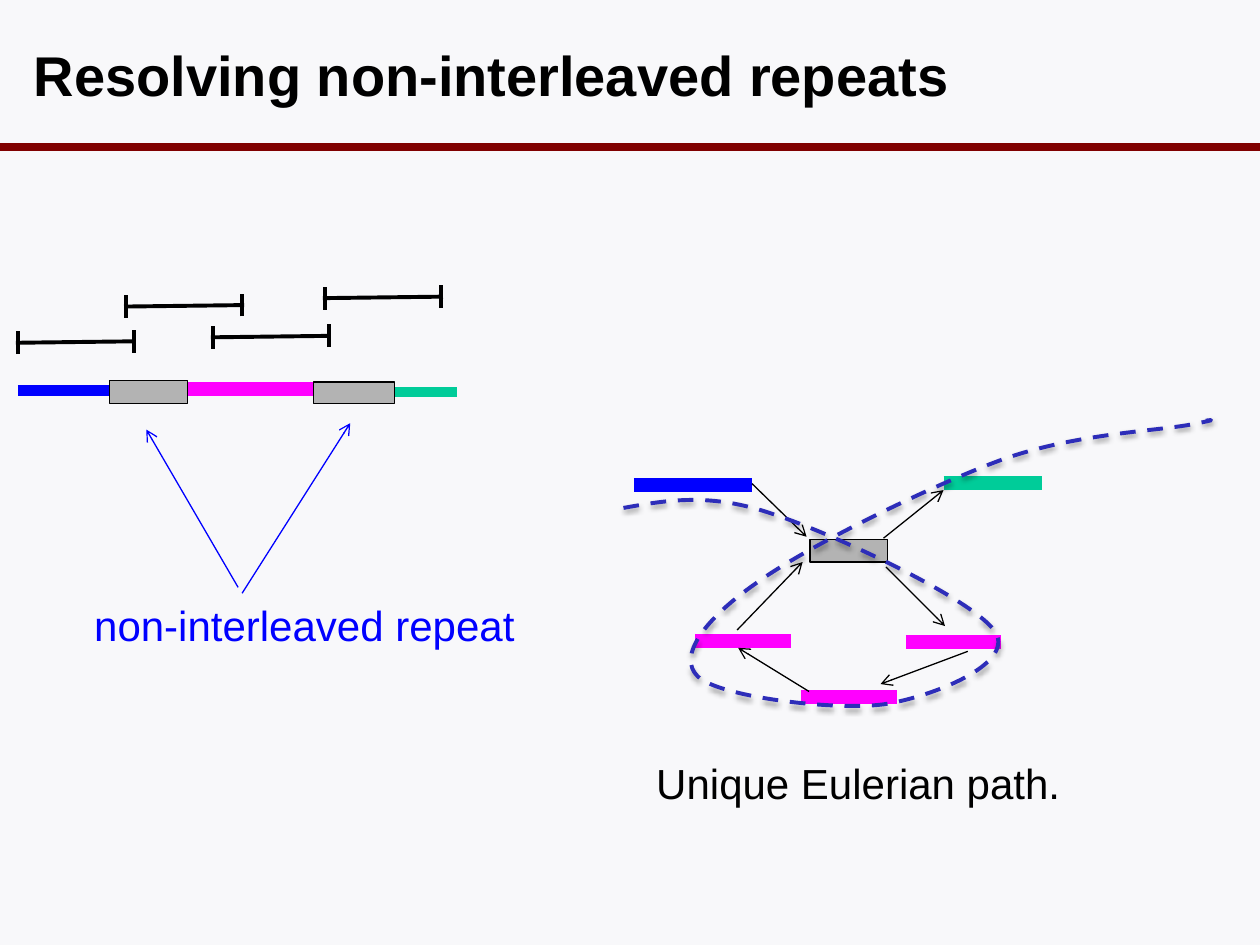
from dataclasses import dataclass

from lxml.etree import SubElement
from pptx import Presentation
from pptx.dml.color import RGBColor
from pptx.enum.dml import MSO_LINE
from pptx.enum.shapes import MSO_CONNECTOR, MSO_SHAPE
from pptx.enum.text import MSO_ANCHOR, MSO_AUTO_SIZE, PP_ALIGN
from pptx.oxml.ns import qn
from pptx.shapes.connector import Connector
from pptx.util import Cm, Pt

BLACK, BLUE, MAGENTA, GREEN = "000000", "0000FF", "FF00FF", "00CC99"
GREY, MAROON, INDIGO, PALE = "B3B3B3", "800000", "2D2DB9", "F8F8FA"
FONT = "Arial"


@dataclass
class Line:
    x1: float
    y1: float
    x2: float
    y2: float
    color: str = BLACK
    width: float = 0.75


@dataclass
class Box:
    left: float
    top: float
    width: float
    height: float


@dataclass
class Label:
    text: str
    box: Box
    color: str


def strip(left: float, right: float, y: float, color: str, width: float) -> Line:
    return Line(left, y, right, y, color, width)


GENOME_STRIPS = [
    strip(7.24, 9.22, 7.9, GREEN, 6),
    strip(0.36, 2.74, 7.87, BLUE, 6),
    strip(3.1, 6.58, 7.85, MAGENTA, 8),
]
GENOME_REPEATS = [Box(2.21, 7.67, 1.57, 0.46), Box(6.32, 7.7, 1.63, 0.43)]

GRAPH_STRIPS = [
    strip(19.02, 21.01, 9.73, GREEN, 8),
    strip(12.78, 15.16, 9.78, BLUE, 8),
    strip(14.02, 15.95, 12.93, MAGENTA, 8),
    strip(18.26, 20.17, 12.95, MAGENTA, 8),
    strip(16.15, 18.08, 14.05, MAGENTA, 8),
]
GRAPH_REPEAT = Box(16.33, 10.87, 1.57, 0.46)
GRAPH_ARROWS = [
    Line(15.16, 9.75, 16.26, 10.82),
    Line(17.86, 11.43, 19.05, 12.62),
    Line(19.51, 13.13, 17.75, 13.79),
    Line(14.86, 12.7, 16.18, 11.33),
    Line(17.81, 10.85, 19.02, 9.88),
    Line(16.31, 13.94, 14.88, 13.06),
]

# Start point, then two control points and an end point for each curve
EULERIAN_PATH = [
    (12.57, 10.24),
    (13.46, 10.08), (14.33, 9.93), (15.57, 10.36),
    (16.84, 10.77), (19.69, 12.12), (20.07, 12.75),
    (20.45, 13.39), (18.8, 14.05), (17.81, 14.2),
    (16.81, 14.33), (14.5, 14.05), (14.07, 13.64),
    (13.64, 13.23), (14.22, 12.47), (15.24, 11.76),
    (16.26, 11.02), (18.75, 9.8), (20.19, 9.27),
    (21.67, 8.74), (23.32, 8.69), (24, 8.56),
    (24.69, 8.43), (24.31, 8.48), (24.31, 8.48),
]

READ_STARTS = [(0.36, 6.91), (2.54, 6.18), (4.29, 6.8), (6.55, 6.01)]
READ_LENGTH, READ_RISE, TICK_HALF, OVERHANG = 2.34, 0.03, 0.23, 0.04

REPEAT_POINTERS = [
    Line(4.8, 11.84, 2.95, 8.66, BLUE),
    Line(4.88, 11.96, 7.06, 8.53, BLUE),
]
LABELS = [
    Label("non-interleaved repeat", Box(1.65, 11.96, 9.07, 1.27), BLUE),
    Label("Unique Eulerian path.", Box(12.98, 15.14, 8.74, 1.27), BLACK),
]


def rgb(color: str) -> RGBColor:
    return RGBColor.from_string(color)


def add_line(shapes, line: Line, arrow: bool = False) -> Connector:
    connector = shapes.add_connector(
        MSO_CONNECTOR.STRAIGHT, Cm(line.x1), Cm(line.y1), Cm(line.x2), Cm(line.y2)
    )
    connector.line.color.rgb = rgb(line.color)
    connector.line.width = Pt(line.width)
    if arrow:
        SubElement(connector.get_or_add_ln(), qn("a:tailEnd"), type="arrow")
    SubElement(connector.element.spPr, qn("a:effectLst"))
    return connector


def add_repeat(shapes, box: Box) -> None:
    shape = shapes.add_shape(
        MSO_SHAPE.RECTANGLE, Cm(box.left), Cm(box.top), Cm(box.width), Cm(box.height)
    )
    shape.shadow.inherit = False
    shape.fill.solid()
    shape.fill.fore_color.rgb = rgb(GREY)
    shape.line.color.rgb = rgb(BLACK)
    shape.line.width = Pt(0.75)


def add_read(shapes, left: float, y: float) -> None:
    """Draw a sequencing read: a slightly rising bar with a tick at each end."""
    group = shapes.add_group_shape()
    right, right_y = left + READ_LENGTH, y - READ_RISE
    add_line(group.shapes, Line(left - OVERHANG, y, right + OVERHANG, right_y, BLACK, 2.25))
    for x, middle in ((left, y), (right, right_y)):
        add_line(group.shapes, Line(x, middle + TICK_HALF, x, middle - TICK_HALF, BLACK, 2.25))


def add_run(paragraph, text: str, size: float, color: str, bold: bool = False) -> None:
    run = paragraph.add_run()
    run.text = text
    run.font.name = FONT
    run.font.size = Pt(size)
    run.font.bold = bold
    run.font.color.rgb = rgb(color)


def add_label(shapes, label: Label) -> None:
    box = label.box
    shape = shapes.add_textbox(Cm(box.left), Cm(box.top), Cm(box.width), Cm(box.height))
    shape.text_frame.word_wrap = False
    shape.text_frame.auto_size = MSO_AUTO_SIZE.SHAPE_TO_FIT_TEXT
    add_run(shape.text_frame.paragraphs[0], label.text, 24, label.color)


def add_curve(shapes, points: list[tuple[float, float]]) -> None:
    """Draw a dashed, shadowed curve, turning each three segments into one Bézier."""
    start, *rest = [(Cm(x), Cm(y)) for x, y in points]
    builder = shapes.build_freeform(*start)
    builder.add_line_segments(rest, close=False)
    shape = builder.convert_to_shape()
    segments = list(shape.element.iter(qn("a:lnTo")))
    outline = segments[0].getparent()
    for first in range(0, len(segments), 3):
        curve = SubElement(outline, qn("a:cubicBezTo"))
        for segment in segments[first:first + 3]:
            curve.append(segment[0])
            outline.remove(segment)
    shape.fill.background()
    shape.line.color.rgb = rgb(INDIGO)
    shape.line.width = Pt(2.25)
    shape.line.dash_style = MSO_LINE.DASH
    shape.shadow.inherit = False
    shadow = SubElement(
        shape.element.spPr.find(qn("a:effectLst")), qn("a:outerShdw"),
        blurRad=str(Pt(3.1)), dist=str(Pt(1.6)), dir="5400000", rotWithShape="0",
    )
    color = SubElement(shadow, qn("a:srgbClr"), val=BLACK)
    SubElement(color, qn("a:alpha"), val="38000")


def format_title(title) -> None:
    title.left, title.top, title.width, title.height = Cm(0.43), Cm(0.43), Cm(21.59), Cm(2.11)
    title.text_frame.vertical_anchor = MSO_ANCHOR.MIDDLE
    paragraph = title.text_frame.paragraphs[0]
    paragraph.alignment = PP_ALIGN.LEFT
    add_run(paragraph, "Resolving non-interleaved repeats", 32, BLACK, bold=True)


def main() -> None:
    presentation = Presentation()
    presentation.slide_width, presentation.slide_height = Cm(25.4), Cm(19.05)
    slide = presentation.slides.add_slide(presentation.slide_layouts[5])
    slide.background.fill.solid()
    slide.background.fill.fore_color.rgb = rgb(PALE)
    shapes = slide.shapes
    format_title(shapes.title)
    add_line(shapes, strip(0, 25.4, 2.97, MAROON, 4.5))

    for line in GENOME_STRIPS:
        add_line(shapes, line)
    for box in GENOME_REPEATS:
        add_repeat(shapes, box)

    graph = shapes.add_group_shape()
    for line in GRAPH_STRIPS:
        add_line(graph.shapes, line)
    add_repeat(graph.shapes, GRAPH_REPEAT)
    for line in GRAPH_ARROWS:
        add_line(graph.shapes, line, arrow=True)
    add_curve(shapes, EULERIAN_PATH)

    for left, y in READ_STARTS:
        add_read(shapes, left, y)
    for line in REPEAT_POINTERS:
        add_line(shapes, line, arrow=True)
    for label in LABELS:
        add_label(shapes, label)
    presentation.save("out.pptx")


if __name__ == "__main__":
    main()
